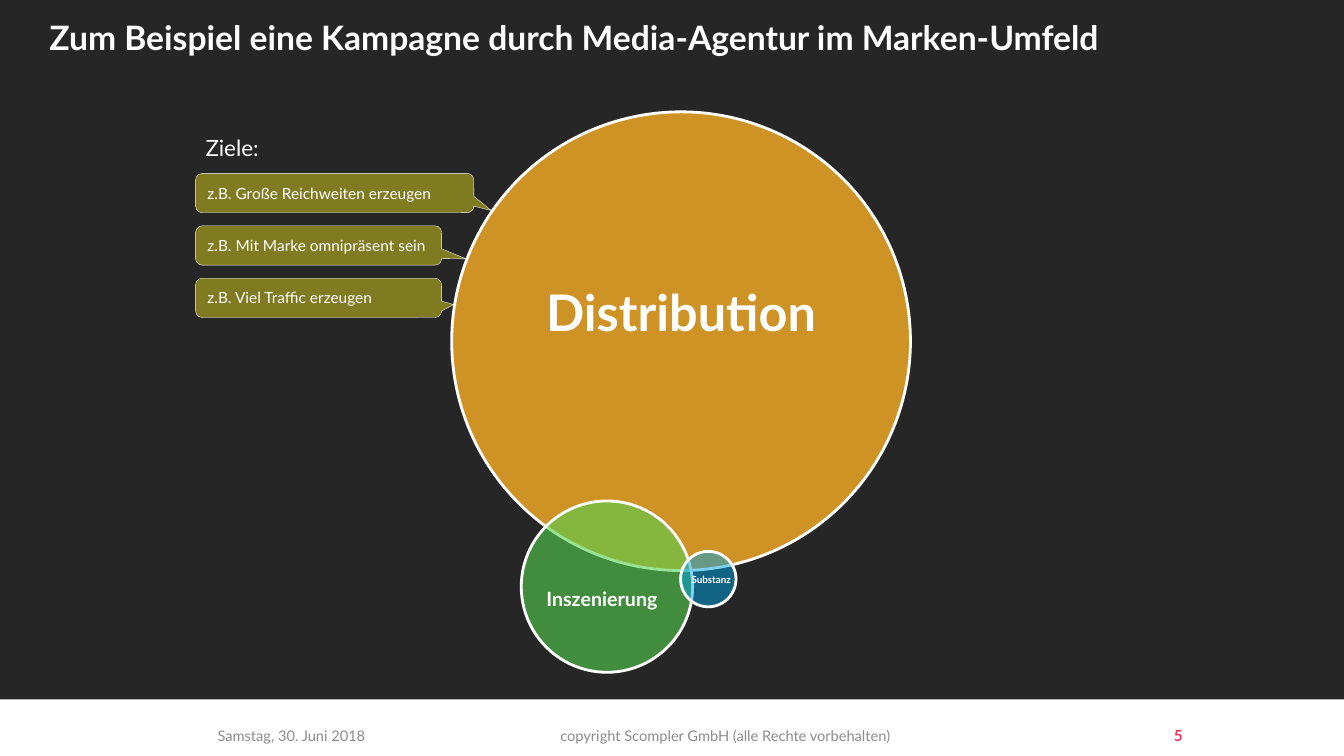
from lxml import etree
from pptx import Presentation
from pptx.dml.color import RGBColor
from pptx.enum.shapes import MSO_SHAPE
from pptx.enum.text import MSO_ANCHOR, MSO_AUTO_SIZE, PP_ALIGN
from pptx.oxml.ns import qn
from pptx.util import Emu, Pt

RECTANGLE, OVAL = MSO_SHAPE.RECTANGLE, MSO_SHAPE.OVAL
CALLOUT = MSO_SHAPE.ROUNDED_RECTANGULAR_CALLOUT
TOP, MIDDLE = MSO_ANCHOR.TOP, MSO_ANCHOR.MIDDLE
LEFT, CENTER, RIGHT = PP_ALIGN.LEFT, PP_ALIGN.CENTER, PP_ALIGN.RIGHT

PX = 9144  # 100 px to the inch
COLORS = {
    "dark": "262626",
    "white": "FFFFFF",
    "grey": "8C8C8C",
    "red": "ED385D",
    "orange": "F9AD25",
    "green": "55D14F",
    "blue": "00A3E5",
    "olive": "A79F20",
}


def px(*lengths):
    return [Emu(length * PX) for length in lengths]


def rgb(name):
    return RGBColor.from_string(COLORS[name])


def write(shape, text, size, color="white", bold=False, align=LEFT,
          anchor=MIDDLE, wrap=True, insets=(10, 5, 10, 5)):
    """Fill a shape with one formatted paragraph; insets run left, top, right, bottom."""
    frame = shape.text_frame
    frame.text = text
    left, top, right, bottom = px(*insets)
    layout = {"auto_size": MSO_AUTO_SIZE.NONE, "word_wrap": wrap,
              "vertical_anchor": anchor, "margin_left": left,
              "margin_top": top, "margin_right": right, "margin_bottom": bottom}
    for name, value in layout.items():
        setattr(frame, name, value)
    para = frame.paragraphs[0]
    para.alignment = align
    font = para.runs[0].font
    for name, value in {"name": "Lato", "size": Pt(size), "bold": bold}.items():
        setattr(font, name, value)
    font.color.rgb = rgb(color)


def add_filled(page, kind, box, color, opacity=100, line_width=0):
    shape = page.shapes.add_shape(kind, *px(*box))
    shape.shadow.inherit = False
    shape.fill.solid()
    shape.fill.fore_color.rgb = rgb(color)
    if opacity < 100:
        tone = shape.fill._xPr.find(qn("a:solidFill"))[0]
        etree.SubElement(tone, qn("a:alpha")).set("val", str(opacity * 1000))
    if line_width:
        shape.line.color.rgb = rgb("white")
        shape.line.width = Pt(line_width)
    else:
        shape.line.fill.background()
    return shape


def add_label(page, box, text, size, **style):
    write(page.shapes.add_textbox(*px(*box)), text, size, **style)


def add_header(page, box):
    """Place the title on the dark stage that fills the given box."""
    left, top, width, _ = box
    stage = add_filled(page, RECTANGLE, box, "dark")
    title = page.shapes.title
    title.element.addprevious(stage.element)
    title.left, title.top, title.width, title.height = px(left, top, width, 74)
    write(title, "Zum Beispiel eine Kampagne durch Media-Agentur im Marken-Umfeld",
          24, bold=True, insets=(49, 5, 10, 5))


def add_footer(page, box):
    left, top, _, height = box
    parts = [
        (494, 451, "copyright Scompler GmbH (alle Rechte vorbehalten)", 10.5,
         {"color": "grey", "align": CENTER}),
        (1108, 75, "5", 11, {"color": "red", "align": RIGHT, "bold": True}),
        (206, 287, "Samstag, 30. Juni 2018", 10.5, {"color": "grey"}),
    ]
    for offset, width, text, size, style in parts:
        add_label(page, (left + offset, top, width, height), text, size, **style)


def add_circles(page, box):
    """Draw the three overlapping circles; each is offset from the box corner."""
    left, top = box[:2]
    circles = [
        (0, 0, 455, "orange", 80, "Distribution", 36, CENTER, (10, 5, 10, 65)),
        (69, 386, 170, "green", 60, "Inszenierung", 14, RIGHT, (10, 28, 10, 5)),
        (227, 436, 55, "blue", 50, "Substanz", 7, CENTER, (10, 5, 4, 5)),
    ]
    for x, y, diameter, color, opacity, text, size, align, insets in circles:
        circle = add_filled(page, OVAL, (left + x, top + y, diameter, diameter),
                            color, opacity, line_width=2)
        write(circle, text, size, bold=True, align=align, wrap=False, insets=insets)


def add_goals(page, box):
    """Stack the goal callouts below their heading."""
    left, top, width, _ = box
    add_label(page, (left, top, 76, 37), "Ziele:", 16, anchor=TOP, wrap=False)
    goals = [
        ("z.B. Große Reichweiten erzeugen", width, 0.563, 0.446),
        ("z.B. Mit Marke omnipräsent sein", width - 32, 0.6, 0.343),
        ("z.B. Viel Traffic erzeugen", width - 32, 0.549, 0.172),
    ]
    for row, (text, goal_width, tip_x, tip_y) in enumerate(goals):
        callout = add_filled(page, CALLOUT, (left, top + 44 + row * 52, goal_width, 39),
                             "olive", 70, line_width=0.25)
        callout.adjustments[0] = tip_x
        callout.adjustments[1] = tip_y
        write(callout, text, 11)


def main():
    deck = Presentation()
    deck.slide_width, deck.slide_height = px(1333, 750)
    page = deck.slides.add_slide(deck.slide_layouts[5])
    add_header(page, (0, 0, 1333, 694))
    add_footer(page, (0, 716, 1333, 28))
    add_circles(page, (448, 111, 455, 556))
    add_goals(page, (194, 128, 276, 187))
    deck.save("out.pptx")


if __name__ == "__main__":
    main()
